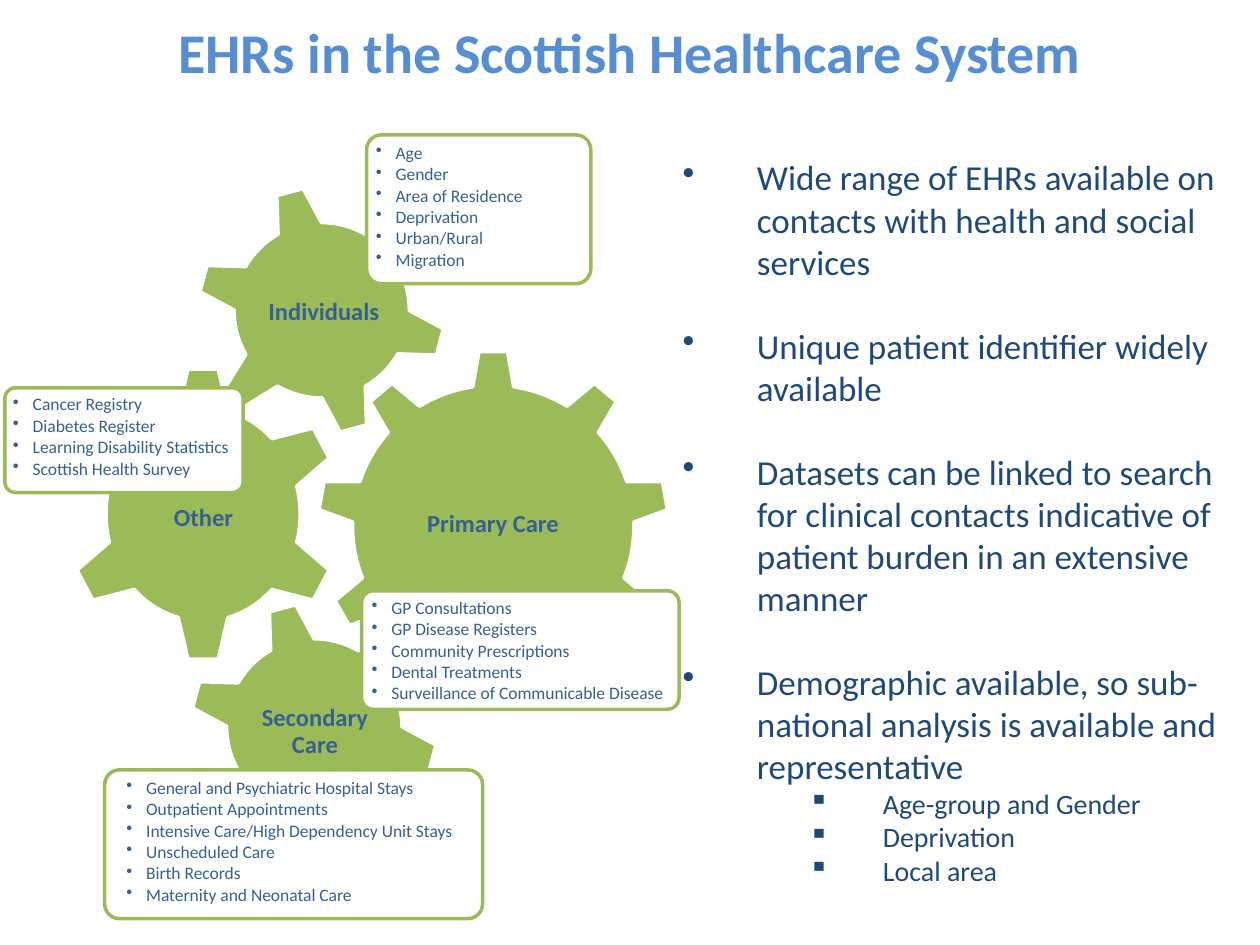
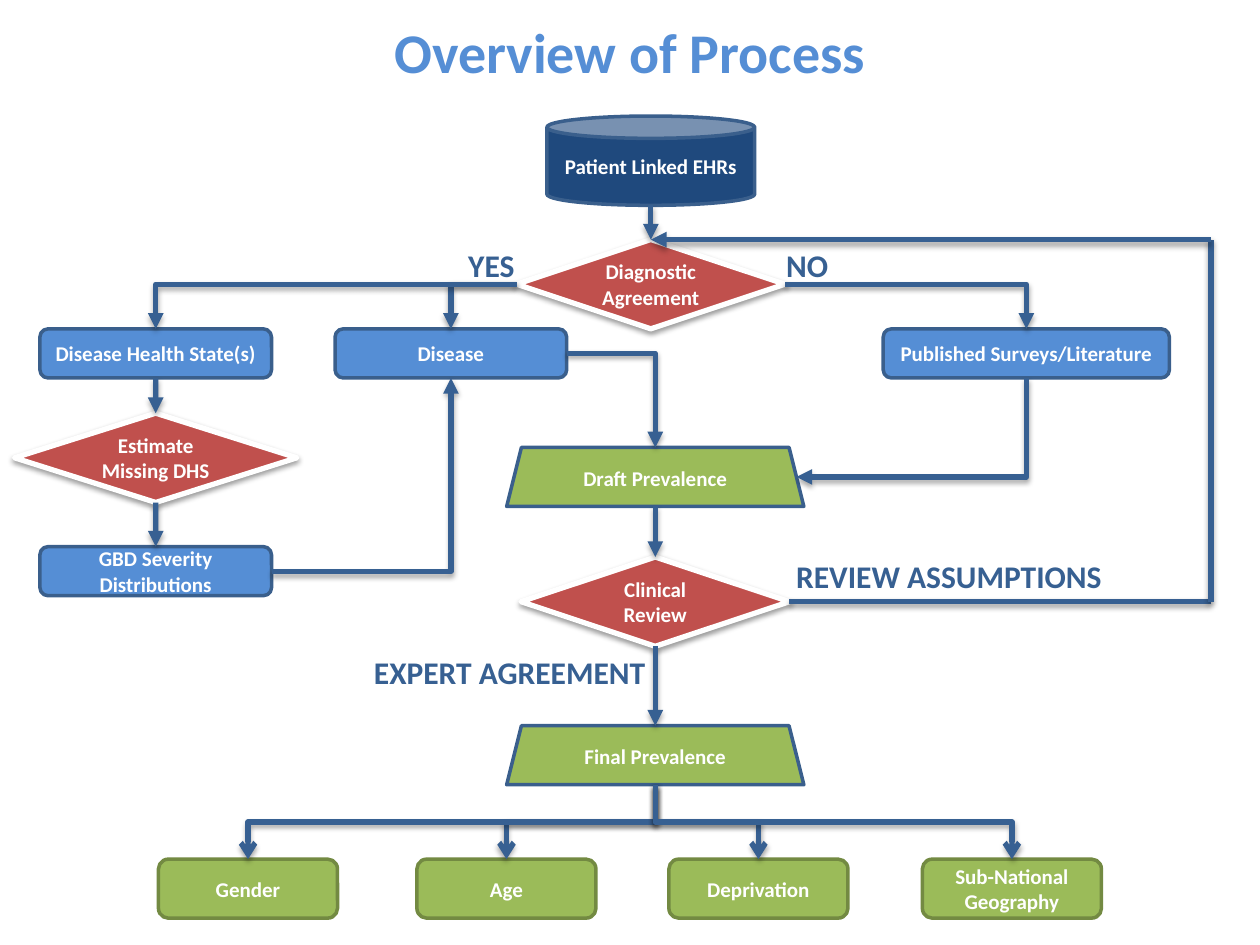
from dataclasses import dataclass
from typing import NamedTuple

from lxml import etree
from pptx import Presentation
from pptx.dml.color import RGBColor
from pptx.enum.shapes import MSO_CONNECTOR, MSO_SHAPE
from pptx.enum.text import MSO_ANCHOR, PP_ALIGN
from pptx.oxml.ns import qn
from pptx.util import Cm, Pt

GEAR6, GEAR9 = MSO_SHAPE.GEAR_6, MSO_SHAPE.GEAR_9
ROUND, CAN = MSO_SHAPE.ROUNDED_RECTANGLE, MSO_SHAPE.CAN
DIAMOND, TRAPEZE = MSO_SHAPE.DIAMOND, MSO_SHAPE.TRAPEZOID
STRAIGHT, ELBOW = MSO_CONNECTOR.STRAIGHT, MSO_CONNECTOR.ELBOW
MIDDLE, TOP_TEXT = MSO_ANCHOR.MIDDLE, MSO_ANCHOR.TOP
CENTER, LEFT_TEXT = PP_ALIGN.CENTER, PP_ALIGN.LEFT
TOP, LEFT, BOTTOM, RIGHT = range(4)


@dataclass(frozen=True)
class Theme:
    font: str = "Calibri"
    blue: str = "558ED5"
    navy: str = "1F497D"
    steel: str = "376092"
    edge: str = "3A5F8C"
    green: str = "9BBB59"
    olive: str = "738A42"
    red: str = "C0504D"
    white: str = "FFFFFF"
    black: str = "000000"
    title: int = 32
    body: int = 20
    tag: int = 18
    sub: int = 16
    gear: int = 14
    node: int = 12
    card: int = 10


THEME = Theme()


class Box(NamedTuple):
    x: float
    y: float
    w: float
    h: float


class Gear(NamedTuple):
    name: str
    shape: int
    box: Box
    label: Box
    turn: int


class Card(NamedTuple):
    box: Box
    inset: float
    items: tuple[str, ...]


class Style(NamedTuple):
    shape: int
    fill: str
    line: str
    weight: float
    w: float
    h: float
    shade: bool = False


class Node(NamedTuple):
    key: str
    text: str
    style: str
    mid: float
    top: float
    wide: float = 0


class Link(NamedTuple):
    start: str
    out: int
    end: str
    into: int
    head: str = "triangle"
    trim: float = 0


GEARS = (
    Gear("Individuals", GEAR6, Box(3.96, 3.73, 5.05, 5.05), Box(5.11, 4.88, 2.84, 2.84), 345),
    Gear("Other", GEAR6, Box(1.3, 7.37, 5.59, 5.99), Box(2.72, 8.97, 2.77, 2.97), 0),
    Gear("Primary Care", GEAR9, Box(6.4, 7.06, 7.09, 7.09), Box(7.82, 8.74, 4.24, 3.66), 0),
    Gear("Secondary Care", GEAR6, Box(3.81, 12.12, 5.05, 5.05), Box(4.93, 13.34, 2.84, 2.84), 345),
)

CARDS = (
    Card(Box(0.1, 7.82, 4.8, 2.11), 0.1, (
        "Cancer Registry", "Diabetes Register",
        "Learning Disability Statistics", "Scottish Health Survey")),
    Card(Box(7.39, 2.72, 4.52, 3), 0.1, (
        "Age", "Gender", "Area of Residence", "Deprivation", "Urban/Rural", "Migration")),
    Card(Box(7.29, 11.91, 6.4, 2.39), 0.13, (
        "GP Consultations", "GP Disease Registers", "Community Prescriptions",
        "Dental Treatments", "Surveillance of Communicable Disease")),
    Card(Box(2.11, 15.52, 7.62, 3), 0.35, (
        "General and Psychiatric Hospital Stays", "Outpatient Appointments",
        "Intensive Care/High Dependency Unit Stays", "Unscheduled Care",
        "Birth Records", "Maternity and Neonatal Care")),
)

POINTS = (
    "Wide range of EHRs available on contacts with health and social services",
    "Unique patient identifier widely available",
    "Datasets can be linked to search for clinical contacts indicative of patient "
    "burden in an extensive manner",
    "Demographic available, so sub-national analysis is available and representative",
)
SUBS = ("Age-group and Gender", "Deprivation", "Local area")

STYLES = {
    "data": Style(CAN, THEME.navy, THEME.edge, 2, 4.19, 1.8),
    "test": Style(DIAMOND, THEME.red, THEME.white, 3, 5.41, 1.8, True),
    "step": Style(ROUND, THEME.blue, THEME.edge, 2, 4.67, 0.99),
    "result": Style(TRAPEZE, THEME.green, THEME.edge, 2, 5.99, 1.19),
    "leaf": Style(ROUND, THEME.green, THEME.olive, 2, 3.61, 1.19),
}

ROOT, MAIN, LOOP = 13.12, 13.21, 24.41
STATE, ILL, BOOKS = 3.14, 9.09, 20.69
NODES = (
    Node("data", "Patient Linked EHRs", "data", ROOT, 2.34),
    Node("agree", "Diagnostic\nAgreement", "test", ROOT, 4.83),
    Node("state", "Disease Health State(s)", "step", STATE, 6.63),
    Node("ill", "Disease", "step", ILL, 6.63),
    Node("books", "Published Surveys/Literature", "step", BOOKS, 6.63, 5.77),
    Node("guess", "Estimate Missing DHS", "test", STATE, 8.33, 5.69),
    Node("split", "GBD Severity Distributions", "step", STATE, 11.02),
    Node("draft", "Draft Prevalence", "result", MAIN, 9.02),
    Node("review", "Clinical Review", "test", MAIN, 11.23),
    Node("final", "Final Prevalence", "result", MAIN, 14.63),
    Node("gender", "Gender", "leaf", 5, 17.32),
    Node("age", "Age", "leaf", 10.21, 17.32),
    Node("need", "Deprivation", "leaf", 15.29, 17.32),
    Node("place", "Sub-National Geography", "leaf", 20.4, 17.32),
)

LINKS = (
    Link("agree", RIGHT, "books", TOP),
    Link("agree", LEFT, "ill", TOP),
    Link("agree", LEFT, "state", TOP),
    Link("ill", RIGHT, "draft", TOP),
    Link("books", BOTTOM, "draft", RIGHT, trim=0.15),
    Link("split", RIGHT, "ill", BOTTOM),
    Link("state", BOTTOM, "guess", TOP),
    Link("guess", BOTTOM, "split", TOP),
    Link("draft", BOTTOM, "review", TOP),
    Link("review", BOTTOM, "final", TOP),
    *(Link("final", BOTTOM, leaf, TOP, "arrow") for leaf in ("age", "gender", "need", "place")),
)

WIRES = (
    (ROOT, 4.14, ROOT, 4.83, "triangle"),
    (15.91, 12.13, LOOP, 12.13, ""),
    (LOOP, 12.13, LOOP, 4.83, ""),
    (LOOP, 4.83, ROOT, 4.83, "triangle"),
)

TAGS = (
    ("NO", Box(15.6, 4.83, 2.39, 1.02)),
    ("YES", Box(9.19, 4.83, 2.39, 1.02)),
    ("REVIEW ASSUMPTIONS", Box(15.8, 11.1, 6.81, 1.02)),
    ("EXPERT AGREEMENT", Box(7.29, 13.03, 6.81, 1.02)),
)


def write(frame, text: str, *, size: int, color: str, bold: bool = False, align=LEFT_TEXT,
          lead: float = 1, after: float = 0, mark: str = "", left: float = 0,
          hang: float = 0) -> None:
    for line in text.split("\n"):
        para = frame.paragraphs[0] if not frame.text else frame.add_paragraph()
        para.alignment, para.line_spacing, para.space_after = align, lead, Pt(after)
        run = para.add_run()
        run.text = line
        run.font.name, run.font.size, run.font.bold = THEME.font, Pt(size), bold
        run.font.color.rgb = RGBColor.from_string(color)
        if mark:
            props = para._p.get_or_add_pPr()
            props.set("marL", str(Cm(left)))
            props.set("indent", str(-Cm(hang)))
            etree.SubElement(props, qn("a:buChar"), char=mark)


def inset(frame, side: float, edge: float) -> None:
    frame.margin_left, frame.margin_right = Cm(side), Cm(edge)
    frame.margin_top = frame.margin_bottom = Cm(edge)


def add_text(slide, box: Box):
    frame = slide.shapes.add_textbox(*map(Cm, box)).text_frame
    frame.word_wrap = True
    return frame


def add_form(slide, kind: int, box: Box, fill: str, line: str, weight: float):
    form = slide.shapes.add_shape(kind, *map(Cm, box))
    form.shadow.inherit = False
    form.fill.solid()
    form.fill.fore_color.rgb = RGBColor.from_string(fill)
    form.line.color.rgb = RGBColor.from_string(line)
    form.line.width = Pt(weight)
    form.text_frame.word_wrap = True
    return form


def shade(props, depth: float, alpha: int) -> None:
    group = props.find(qn("a:effectLst"))
    if group is None:
        group = etree.SubElement(props, qn("a:effectLst"))
    cast = etree.SubElement(group, qn("a:outerShdw"), blurRad=str(Pt(3.1)),
                            dist=str(Pt(depth)), dir="5400000", rotWithShape="0")
    tint = etree.SubElement(cast, qn("a:srgbClr"), val=THEME.black)
    etree.SubElement(tint, qn("a:alpha"), val=str(alpha * 1000))


def dress(wire, head: str) -> None:
    wire.line.color.rgb = RGBColor.from_string(THEME.steel)
    wire.line.width = Pt(3)
    if head:
        etree.SubElement(wire.line._get_or_add_ln(), qn("a:tailEnd"), type=head)
    shade(wire._element.spPr, 1.8, 35)


def add_link(slide, link: Link, forms: dict) -> None:
    wire = slide.shapes.add_connector(ELBOW, 0, 0, 0, 0)
    wire.begin_connect(forms[link.start], link.out)
    wire.end_connect(forms[link.end], link.into)
    wire.end_x -= Cm(link.trim)
    wide, high = wire.end_x - wire.begin_x, wire.end_y - wire.begin_y
    props = wire._element.spPr
    shape = "bentConnector2"
    if abs(wide) < Cm(0.1):
        shape = "line"
    elif link.out == BOTTOM:
        mid_x, mid_y = wire.begin_x + wide // 2, wire.begin_y + high // 2
        wire.begin_x, wire.end_x = mid_x - high // 2, mid_x + high // 2
        wire.begin_y, wire.end_y = mid_y + wide // 2, mid_y - wide // 2
        props.find(qn("a:xfrm")).set("rot", "5400000")
        if link.into == TOP:
            shape = "bentConnector3"
    props.find(qn("a:prstGeom")).set("prst", shape)
    dress(wire, link.head)


def add_page(deck, title: str):
    slide = deck.slides.add_slide(deck.slide_layouts[6])
    write(add_text(slide, Box(0, 0.23, 25.4, 1.63)), title, size=THEME.title,
          color=THEME.blue, bold=True, align=CENTER)
    return slide


def draw_gears(deck) -> None:
    slide = add_page(deck, "EHRs in the Scottish Healthcare System")
    body = add_text(slide, Box(13.51, 3.02, 11.89, 15.5))
    for point in POINTS:
        write(body, point, size=THEME.body, color=THEME.navy, mark="•", left=1.5, hang=1.5,
              after=0 if point == POINTS[-1] else 24)
    for sub in SUBS:
        write(body, sub, size=THEME.sub, color=THEME.navy, mark="▪", left=4.04, hang=1.5)
    for gear in GEARS:
        form = add_form(slide, gear.shape, gear.box, THEME.green, THEME.white, 2)
        form.rotation = gear.turn
        frame = add_text(slide, gear.label)
        frame.vertical_anchor = MIDDLE
        inset(frame, 0.06, 0.06)
        write(frame, gear.name, size=THEME.gear, color=THEME.steel, bold=True,
              align=CENTER, lead=0.9)
    for card in CARDS:
        form = add_form(slide, ROUND, card.box, THEME.white, THEME.green, 2)
        form.adjustments[0] = 0.1
        frame = form.text_frame
        frame.vertical_anchor = TOP_TEXT
        inset(frame, card.inset, 0.1)
        for item in card.items:
            write(frame, item, size=THEME.card, color=THEME.steel, lead=0.9, after=1.4,
                  mark="•", left=0.4, hang=0.4)


def draw_flow(deck) -> None:
    slide = add_page(deck, "Overview of Process")
    forms = {}
    for node in NODES:
        style = STYLES[node.style]
        wide = node.wide or style.w
        box = Box(node.mid - wide / 2, node.top, wide, style.h)
        form = add_form(slide, style.shape, box, style.fill, style.line, style.weight)
        form.text_frame.vertical_anchor = MIDDLE
        write(form.text_frame, node.text, size=THEME.node, color=THEME.white, bold=True,
              align=CENTER)
        if style.shade:
            shade(form._element.spPr, 1.6, 38)
        forms[node.key] = form
    for link in LINKS:
        add_link(slide, link, forms)
    for *ends, head in WIRES:
        dress(slide.shapes.add_connector(STRAIGHT, *map(Cm, ends)), head)
    for text, box in TAGS:
        write(add_text(slide, box), text, size=THEME.tag, color=THEME.steel, bold=True)


def main() -> None:
    deck = Presentation()
    deck.slide_width, deck.slide_height = Cm(25.4), Cm(19.05)
    draw_gears(deck)
    draw_flow(deck)
    deck.save("out.pptx")


if __name__ == "__main__":
    main()
